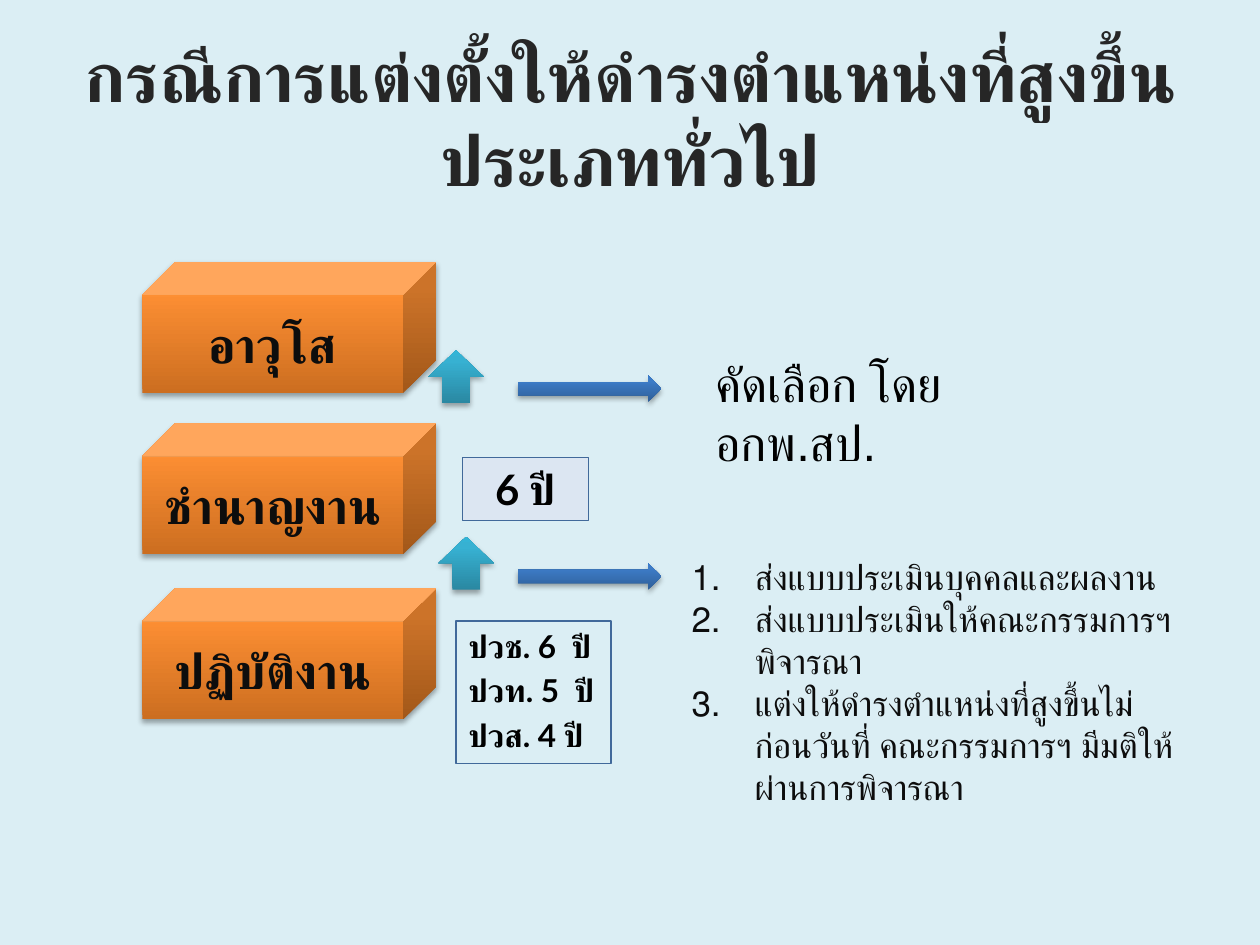
from pptx import Presentation
from pptx.dml.color import RGBColor
from pptx.enum import shapes, text
from pptx.oxml import parse_xml
from pptx.oxml.ns import nsdecls, qn
from pptx.util import Inches, Pt

ORANGE = ((0, "CC6E20"), (80, "FF9034"), (100, "FF9136"))
TEAL = ((0, "2A88A2"), (80, "37B1D2"), (100, "34B4D6"))
BLUE = ((0, "2F5F99"), (80, "3D7CC7"), (100, "3A7CCB"))
LEFT, CENTER = text.PP_ALIGN.LEFT, text.PP_ALIGN.CENTER
TOP, MIDDLE = text.MSO_ANCHOR.TOP, text.MSO_ANCHOR.MIDDLE


def color(value):
    """Turn a hex string into a colour."""
    return RGBColor.from_string(value)


def write(box, lines, size, font="Lato", ink="000000", bold=True,
          align=LEFT, anchor=TOP, gap=0):
    """Write and format one paragraph per line."""
    frame = box.text_frame
    frame.word_wrap = True
    frame.vertical_anchor = anchor
    frame.text = "\n".join(lines)
    for index, para in enumerate(frame.paragraphs):
        para.alignment = align
        para.space_before = Pt(gap if index else 0)
        for span in para.runs:
            span.font.size = Pt(size)
            span.font.name = font
            span.font.bold = bold
            span.font.color.rgb = color(ink)


def add_text(page, area, lines, size, **style):
    """Add a wrapping text box."""
    box = page.shapes.add_textbox(*map(Inches, area))
    write(box, lines, size, **style)
    return box


def add_solid(page, kind, area, stops):
    """Add a preset shape with a vertical gradient and a soft shadow."""
    shape = page.shapes.add_shape(kind, *map(Inches, area))
    shape.line.fill.background()
    shape.shadow.inherit = False
    marks = "".join(f'<a:gs pos="{place * 1000}"><a:srgbClr val="{value}"/></a:gs>'
                    for place, value in stops)
    properties = shape.element.spPr
    properties.find(qn("a:prstGeom")).addnext(parse_xml(
        f'<a:gradFill {nsdecls("a")} rotWithShape="1"><a:gsLst>{marks}</a:gsLst>'
        '<a:lin ang="16200000" scaled="0"/></a:gradFill>'))
    properties.find(qn("a:effectLst")).append(parse_xml(
        f'<a:outerShdw {nsdecls("a")} blurRad="{Pt(3.1)}" dist="{Pt(1.8)}" '
        'dir="5400000" rotWithShape="0"><a:srgbClr val="000000">'
        '<a:alpha val="35000"/></a:srgbClr></a:outerShdw>'))
    return shape


def add_frame(page, area, lines, size, fill=None, **style):
    """Add an outlined rectangle with bold text."""
    shape = page.shapes.add_shape(shapes.MSO_SHAPE.RECTANGLE, *map(Inches, area))
    shape.shadow.inherit = False
    shape.line.color.rgb = color("41699A")
    shape.line.width = Pt(0.75)
    if fill:
        shape.fill.solid()
        shape.fill.fore_color.rgb = color(fill)
    else:
        shape.fill.background()
    write(shape, lines, size, **style)


def number_paragraphs(box):
    """Number the paragraphs with a hanging indent."""
    for para in box.text_frame.paragraphs:
        properties = para._p.get_or_add_pPr()
        properties.set("marL", str(Inches(0.5)))
        properties.set("indent", str(-Inches(0.5)))
        properties.append(parse_xml(f'<a:buFont {nsdecls("a")} typeface="Arial"/>'))
        properties.append(parse_xml(
            f'<a:buAutoNum {nsdecls("a")} type="arabicPeriod"/>'))


def main():
    """Build the slide and save it."""
    deck = Presentation()
    deck.slide_width, deck.slide_height = Inches(10), Inches(7.5)
    page = deck.slides.add_slide(deck.slide_layouts[6])
    page.background.fill.solid()
    page.background.fill.fore_color.rgb = color("DBEEF4")

    add_text(page, (0.5, 0.3, 9, 1.25),
             ["กรณีการแต่งตั้งให้ดำรงตำแหน่งที่สูงขึ้น ประเภททั่วไป"], 40,
             ink="262626", align=CENTER, anchor=MIDDLE)

    levels = (("ปฏิบัติงาน", 4.67), ("ชำนาญงาน", 3.36), ("อาวุโส", 2.08))
    for level, top in levels:
        cube = add_solid(page, shapes.MSO_SHAPE.CUBE, (1.13, top, 2.33, 1.04), ORANGE)
        write(cube, [level], 28, ink="0D0D0D", align=CENTER, anchor=MIDDLE)

    for left, top, pointer_top in ((3.48, 4.26, 4.47), (3.4, 2.78, 2.98)):
        add_solid(page, shapes.MSO_SHAPE.UP_ARROW, (left, top, 0.44, 0.42), TEAL)
        add_solid(page, shapes.MSO_SHAPE.RIGHT_ARROW,
                  (4.11, pointer_top, 1.14, 0.21), BLUE)

    add_frame(page, (3.62, 4.93, 1.23, 1.13),
              ["ปวช. 6  ปี", "ปวท. 5  ปี", "ปวส. 4 ปี"], 18, gap=3.6)
    add_frame(page, (3.67, 3.63, 1, 0.5), ["6 ปี"], 24, fill="DCE6F2", align=CENTER)

    steps = add_text(page, (5.39, 4.36, 4.09, 1.45), [
        "ส่งแบบประเมินบุคคลและผลงาน",
        "ส่งแบบประเมินให้คณะกรรมการฯ พิจารณา",
        "แต่งให้ดำรงตำแหน่งที่สูงขึ้นไม่ก่อนวันที่ คณะกรรมการฯ มีมติให้ผ่านการพิจารณา",
    ], 20, font="Roboto", ink="0D0D0D", bold=False)
    number_paragraphs(steps)
    add_text(page, (5.58, 2.76, 2.83, 0.57), ["คัดเลือก โดย อกพ.สป."], 28,
             font="Arial", bold=False)
    deck.save("out.pptx")


if __name__ == "__main__":
    main()
